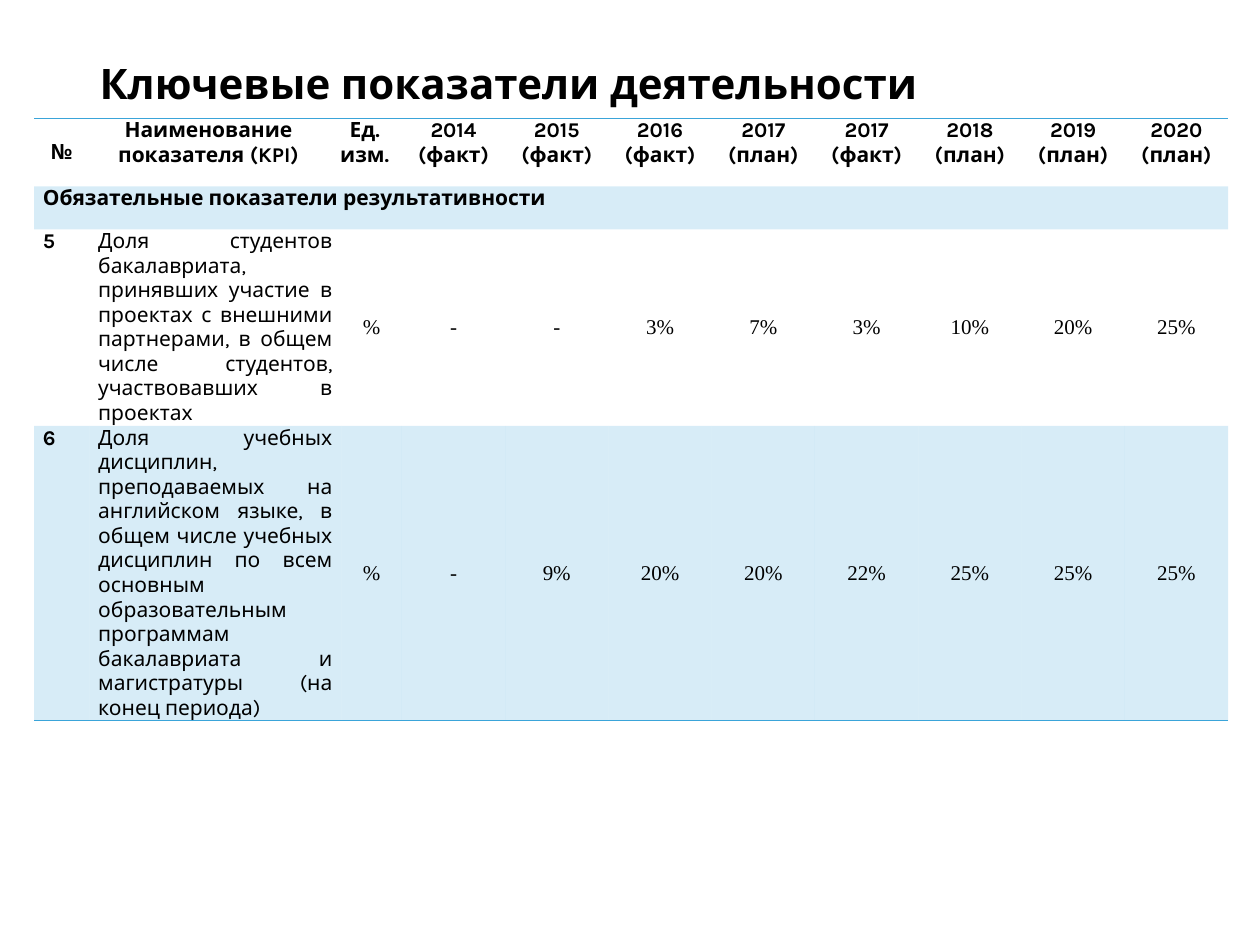
from lxml.etree import SubElement
from pptx import Presentation
from pptx.dml.color import RGBColor
from pptx.enum.text import MSO_ANCHOR, PP_ALIGN
from pptx.oxml.ns import qn
from pptx.util import Inches, Pt

# Content
TITLE = "Ключевые показатели деятельности"
YEARS = [("2014", "факт"), ("2015", "факт"), ("2016", "факт"), ("2017", "план"),
         ("2017", "факт"), ("2018", "план"), ("2019", "план"), ("2020", "план")]
SECTION = "Обязательные показатели результативности"
INDICATORS = [
    ("5", "Доля студентов бакалавриата, принявших участие в проектах с внешними "
          "партнерами, в общем числе студентов, участвовавших в проектах",
     "%", ["-", "-", "3%", "7%", "3%", "10%", "20%", "25%"]),
    ("6", "Доля учебных дисциплин, преподаваемых на английском языке, в общем "
          "числе учебных дисциплин по всем основным образовательным программам "
          "бакалавриата и магистратуры (на конец периода)",
     "%", ["-", "9%", "20%", "20%", "22%", "25%", "25%", "25%"]),
]

# Layout and style
COLS = [0.44, 1.89, 0.11, 0.48] + [0.82] * len(YEARS)
ROWS = [0.54, 0.34, 1.56, 2.34]
FIRST_YEAR = 4
BLUE = "3AA4D9"
SHADED_ROWS = (1, 3)
EDGES = {0: ("lnT", "lnB"), 3: ("lnB",)}
TOP, MIDDLE = MSO_ANCHOR.TOP, MSO_ANCHOR.MIDDLE
LEFT, CENTER, JUSTIFY = PP_ALIGN.LEFT, PP_ALIGN.CENTER, PP_ALIGN.JUSTIFY


def color(hex_value):
    return RGBColor.from_string(hex_value)


def write(tf, text, size=12, font="Karla", bold=False, align=CENTER):
    """Write text into a frame, one paragraph per line."""
    for i, line in enumerate(text.split("\n")):
        p = tf.paragraphs[0] if i == 0 else tf.add_paragraph()
        p.alignment = align
        r = p.add_run()
        r.text = line
        r.font.size, r.font.name, r.font.bold = Pt(size), font, bold
        r.font.color.rgb = color("000000")


def style_cell(cell, edges, shaded):
    cell.margin_left = cell.margin_right = Inches(0.07)
    cell.margin_top = cell.margin_bottom = 0
    tc_pr = cell._tc.get_or_add_tcPr()
    for side in ("lnL", "lnR", "lnT", "lnB"):
        ln = SubElement(tc_pr, qn(f"a:{side}"), w=str(Pt(1)))
        if side in edges:
            fill = SubElement(ln, qn("a:solidFill"))
            SubElement(fill, qn("a:srgbClr"), val=BLUE)
        else:
            SubElement(ln, qn("a:noFill"))
    if shaded:
        cell.fill.solid()
        cell.fill.fore_color.rgb = color(BLUE)
        clr = tc_pr.find(qn("a:solidFill")).find(qn("a:srgbClr"))
        SubElement(clr, qn("a:alpha"), val="20000")
    else:
        cell.fill.background()


prs = Presentation()
prs.slide_width, prs.slide_height = Inches(10), Inches(7.5)
s = prs.slides.add_slide(prs.slide_layouts[5])

# Title
title = s.shapes.title
title.left, title.top = Inches(0.69), Inches(0.4)
title.width, title.height = Inches(8.62), Inches(0.52)
title.text_frame.vertical_anchor = MIDDLE
write(title.text_frame, TITLE, size=24, bold=True, align=LEFT)

# Table grid
frame = s.shapes.add_table(len(ROWS), len(COLS), Inches(0.27), Inches(0.94),
                           Inches(sum(COLS)), Inches(sum(ROWS)))
table = frame.table
table.first_row = table.horz_banding = False
for column, width in zip(table.columns, COLS):
    column.width = Inches(width)
for i, height in enumerate(ROWS):
    table.rows[i].height = Inches(height)
    for j in range(len(COLS)):
        style_cell(table.cell(i, j), EDGES.get(i, ()), i in SHADED_ROWS)


def put(row, col, text, anchor=TOP, last=None, **fmt):
    """Fill a cell, merged through column `last` when given."""
    cell = table.cell(row, col)
    if last is not None:
        cell.merge(table.cell(row, last))
    cell.vertical_anchor = anchor
    write(cell.text_frame, text, **fmt)


# Header and section rows
put(0, 0, "№", anchor=MIDDLE, bold=True)
put(0, 1, "Наименование показателя (KPI)", bold=True)
put(0, 2, "Ед. изм.", last=3, bold=True)
for j, (year, kind) in enumerate(YEARS, FIRST_YEAR):
    put(0, j, f"{year}\n({kind})", bold=True)
put(1, 0, SECTION, last=len(COLS) - 1, bold=True, align=LEFT)

# Indicator rows
for i, (number, name, unit, values) in enumerate(INDICATORS, 2):
    put(i, 0, number, bold=True, align=JUSTIFY)
    put(i, 1, name, anchor=MIDDLE, last=2, align=JUSTIFY)
    for j, value in enumerate([unit] + values, FIRST_YEAR - 1):
        put(i, j, value, anchor=MIDDLE, font="Times New Roman")

prs.save("out.pptx")
